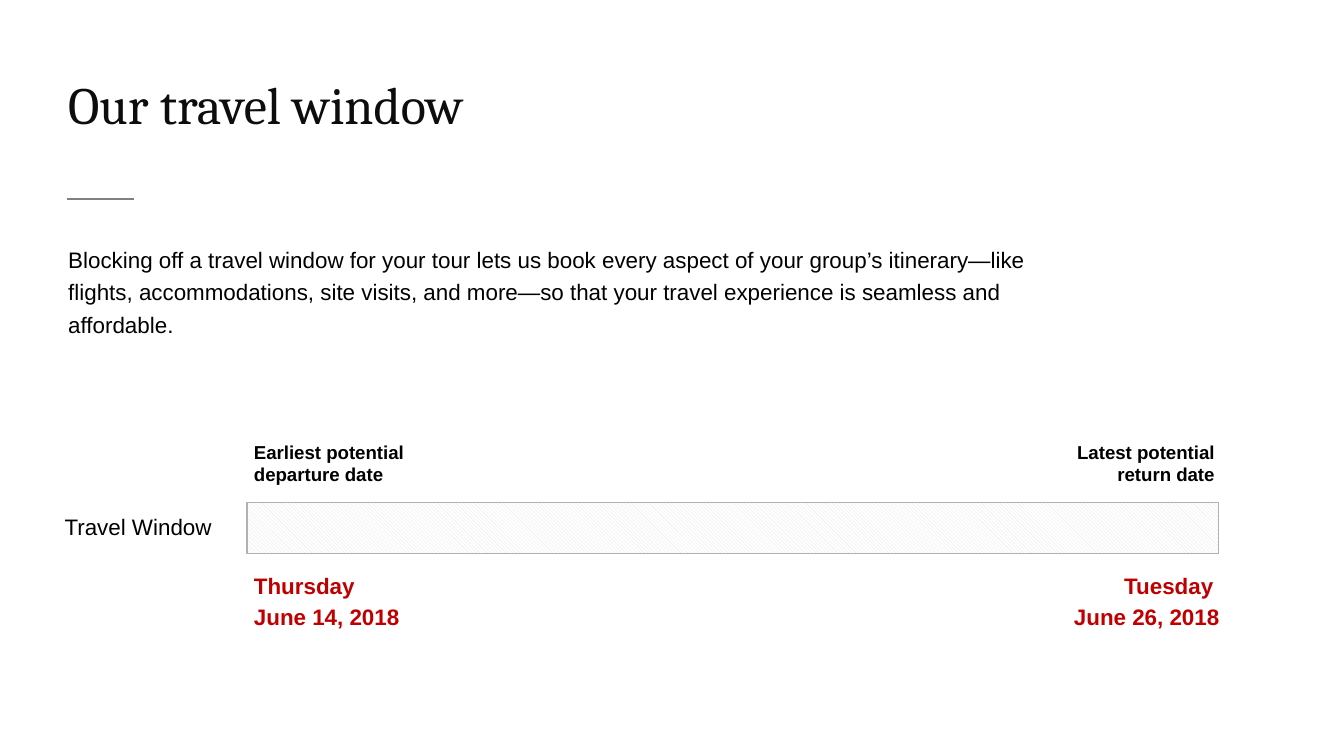
from pptx import Presentation
from pptx.dml.color import RGBColor
from pptx.enum.dml import MSO_PATTERN
from pptx.enum.shapes import MSO_CONNECTOR, MSO_SHAPE
from pptx.enum.text import PP_ALIGN
from pptx.oxml.ns import qn
from pptx.util import Cm, Pt
from lxml import etree

BLACK = RGBColor(0x00, 0x00, 0x00)
TITLE_INK = RGBColor(0x0D, 0x0D, 0x0D)
DATE_RED = RGBColor(0xC0, 0x00, 0x00)
RULE_GRAY = RGBColor(0x80, 0x80, 0x80)
BAR_LINE = RGBColor(0xB0, 0xB1, 0xB0)
HATCH = RGBColor(0xE4, 0xE4, 0xE4)
WHITE = RGBColor(0xFF, 0xFF, 0xFF)

LABEL_LEFT = 4.55
LABEL_RIGHT = 23.3
LABEL_WIDTH = 4.55
HEADING_TOP = 8.2
DATE_TOP = 10.62

BODY = (
    "Blocking off a travel window for your tour lets us book every aspect of "
    "your group’s itinerary—like flights, accommodations, site visits, and "
    "more—so that your travel experience is seamless and affordable."
)


def add_text(page, text, left, top, width, height, size=12, color=BLACK,
             font="Arial", bold=False, align=PP_ALIGN.LEFT, line_spacing=None):
    box = page.shapes.add_textbox(Cm(left), Cm(top), Cm(width), Cm(height))
    box.text_frame.word_wrap = True
    box.text_frame.text = text
    for paragraph in box.text_frame.paragraphs:
        paragraph.alignment = align
        if line_spacing:
            paragraph.line_spacing = Pt(line_spacing)
        for span in paragraph.runs:
            span.font.name = font
            span.font.size = Pt(size)
            span.font.bold = bold
            span.font.color.rgb = color
    return box


def add_endpoint(page, heading, date, left, align):
    add_text(page, heading, left, HEADING_TOP, LABEL_WIDTH, 1.12,
             size=10, bold=True, align=align)
    add_text(page, date, left, DATE_TOP, LABEL_WIDTH, 1.4,
             color=DATE_RED, bold=True, align=align, line_spacing=16.4)


def add_rule(page, left, right, top):
    rule = page.shapes.add_connector(
        MSO_CONNECTOR.STRAIGHT, Cm(left), Cm(top), Cm(right), Cm(top))
    rule.line.color.rgb = RULE_GRAY
    rule.line.width = Pt(0.75)
    etree.SubElement(rule._element.spPr, qn("a:effectLst"))


def add_window_bar(page, left, top, width, height):
    bar = page.shapes.add_shape(
        MSO_SHAPE.RECTANGLE, Cm(left), Cm(top), Cm(width), Cm(height))
    bar.shadow.inherit = False
    bar.fill.patterned()
    bar.fill.pattern = MSO_PATTERN.LIGHT_DOWNWARD_DIAGONAL
    bar.fill.fore_color.rgb = HATCH
    bar.fill.back_color.rgb = WHITE
    bar.line.color.rgb = BAR_LINE
    bar.line.width = Pt(0.75)


def main():
    deck = Presentation()
    deck.slide_width = Cm(25.4)
    deck.slide_height = Cm(14.29)
    page = deck.slides.add_slide(deck.slide_layouts[6])

    add_text(page, "Our travel window", 1.04, 1.24, 17.15, 2.34,
             size=28, color=TITLE_INK, font="Cambria")
    add_rule(page, 1.27, 2.54, 3.76)
    body = add_text(page, BODY, 1.04, 4.42, 18.77, 2.67, line_spacing=17.4)
    body.text_frame.paragraphs[0].space_after = Pt(6)

    add_text(page, "Travel Window", 0.97, 9.58, 3.4, 0.76)
    add_window_bar(page, 4.67, 9.5, 18.36, 0.97)
    add_endpoint(page, "Earliest potential\ndeparture date",
                 "Thursday\nJune 14, 2018", LABEL_LEFT, PP_ALIGN.LEFT)
    add_endpoint(page, "Latest potential \nreturn date ",
                 "Tuesday \nJune 26, 2018", LABEL_RIGHT - LABEL_WIDTH,
                 PP_ALIGN.RIGHT)

    deck.save("out.pptx")


if __name__ == "__main__":
    main()
